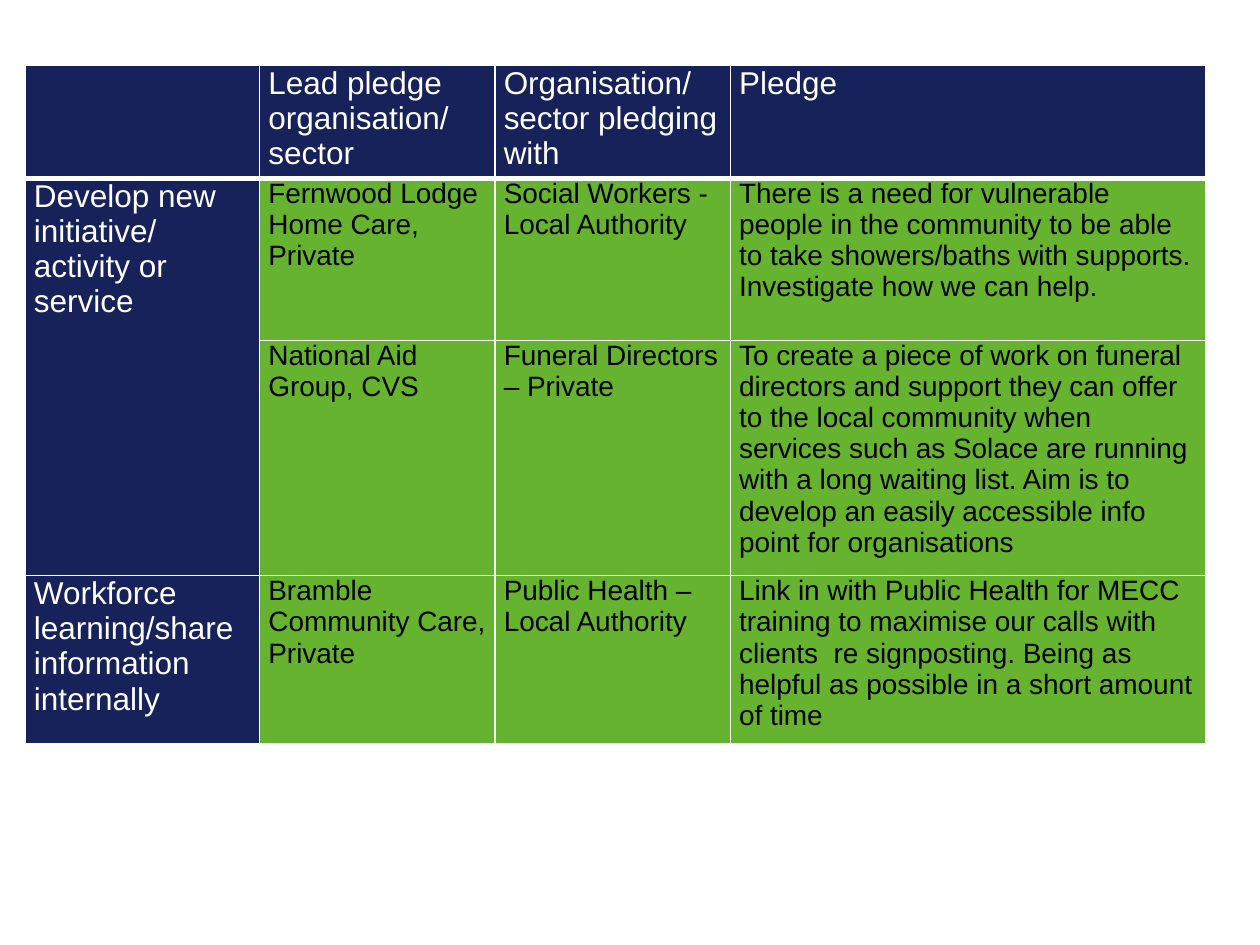
from lxml.etree import SubElement
from pptx import Presentation
from pptx.dml.color import RGBColor
from pptx.enum.text import MSO_ANCHOR
from pptx.oxml.ns import qn
from pptx.util import Pt

NAVY, GREEN, WHITE, BLACK = "162259", "65B32E", "FFFFFF", "000000"

COLUMN_WIDTHS = [134, 134.5, 134.5, 271.5]
ROW_HEIGHTS = [64.5, 92.5, 134.5, 96]
PLEDGES = [
    ["", "Lead pledge organisation/\nsector",
     "Organisation/\nsector pledging with", "Pledge"],
    ["Develop new initiative/\nactivity or service",
     "Fernwood Lodge Home Care, Private",
     "Social Workers - Local Authority",
     "There is a need for vulnerable people in the community to be able to "
     "take showers/baths with supports. Investigate how we can help."],
    ["", "National Aid Group, CVS", "Funeral Directors – Private",
     "To create a piece of work on funeral directors and support they can "
     "offer to the local community when services such as Solace are running "
     "with a long waiting list. Aim is to develop an easily accessible info "
     "point for organisations"],
    ["Workforce learning/share information internally",
     "Bramble Community Care, Private", "Public Health – Local Authority",
     "Link in with Public Health for MECC training to maximise our calls "
     "with clients  re signposting. Being as helpful as possible in a short "
     "amount of time"],
]


def color(value):
    return RGBColor.from_string(value)


class PledgePage:
    font = "Arial"
    heading_size, body_size = 18, 16

    def __init__(self, deck):
        self.page = deck.slides.add_slide(deck.slide_layouts[6])

    def add_table(self, left, top, widths, heights, rows):
        frame = self.page.shapes.add_table(
            len(heights), len(widths), Pt(left), Pt(top),
            Pt(sum(widths)), Pt(sum(heights)))
        table = frame.table
        table.first_row = table.horz_banding = False
        for column, width in zip(table.columns, widths):
            column.width = Pt(width)
        for row, height in zip(table.rows, heights):
            row.height = Pt(height)
        for r, texts in enumerate(rows):
            for c, text in enumerate(texts):
                self.fill_cell(table.cell(r, c), text, r == 0 or c == 0)
                self.draw_borders(table.cell(r, c), top=3 if r == 1 else 1,
                                  bottom=3 if r == 0 else 1)
        return table

    def fill_cell(self, cell, text, heading):
        cell.fill.solid()
        cell.fill.fore_color.rgb = color(NAVY if heading else GREEN)
        cell.margin_left = cell.margin_right = Pt(5)
        cell.margin_top = cell.margin_bottom = 0
        cell.vertical_anchor = MSO_ANCHOR.TOP
        cell.text = text
        for para in cell.text_frame.paragraphs:
            para.font.name = self.font
            para.font.size = Pt(self.heading_size if heading else self.body_size)
            para.font.bold = False
            para.font.color.rgb = color(WHITE if heading else BLACK)

    def draw_borders(self, cell, top, bottom):
        properties = cell._tc.get_or_add_tcPr()
        sides = [("a:lnL", 1), ("a:lnR", 1), ("a:lnT", top), ("a:lnB", bottom)]
        for position, (tag, width) in enumerate(sides):
            line = SubElement(properties, qn(tag), w=str(Pt(width)))
            fill = SubElement(line, qn("a:solidFill"))
            SubElement(fill, qn("a:srgbClr"), val=WHITE)
            properties.insert(position, line)


def main():
    deck = Presentation()
    deck.slide_width, deck.slide_height = Pt(720), Pt(540)
    table = PledgePage(deck).add_table(
        14.4, 37.5, COLUMN_WIDTHS, ROW_HEIGHTS, PLEDGES)
    table.cell(1, 0).merge(table.cell(2, 0))
    deck.save("out.pptx")


if __name__ == "__main__":
    main()
